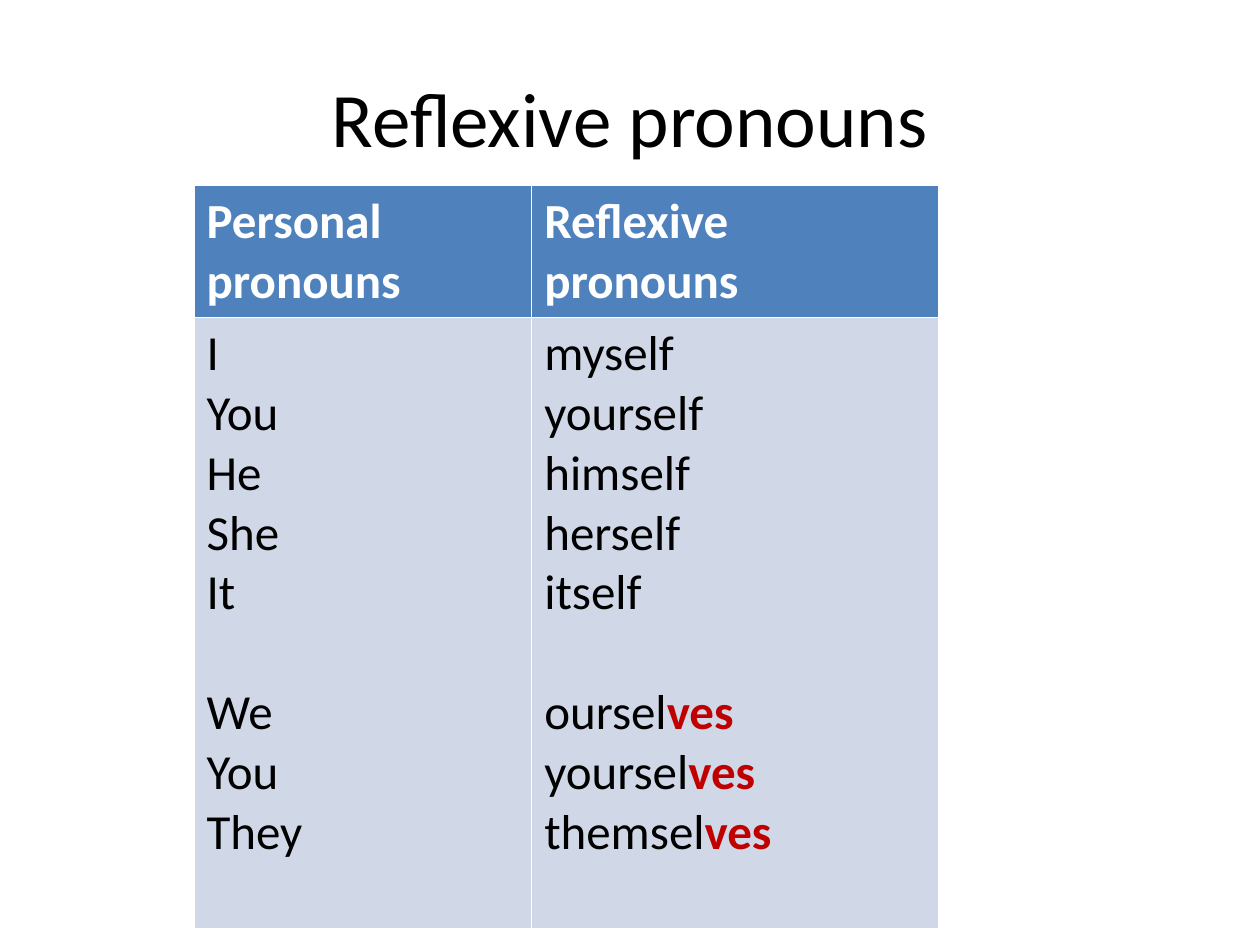
from pptx import Presentation
from pptx.dml.color import RGBColor
from pptx.enum.text import MSO_ANCHOR, PP_ALIGN
from pptx.util import Inches, Pt

MIDDLE = MSO_ANCHOR.MIDDLE
LEFT, CENTER = PP_ALIGN.LEFT, PP_ALIGN.CENTER
FONT = "Calibri"
COLORS = {"ink": "000000", "white": "FFFFFF", "head": "4F81BD",
          "body": "D0D8E8", "mark": "C00000"}
HEADS = ["Personal pronouns", "Reflexive pronouns"]
SINGLE = [("I", "myself"), ("You", "yourself"), ("He", "himself"),
          ("She", "herself"), ("It", "itself")]
PLURAL = [("We", "ourselves"), ("You", "yourselves"), ("They", "themselves")]
ENDING = "ves"


def color(name):
    """Return the named colour."""
    return RGBColor.from_string(COLORS[name])


def write(para, text, size=28, ink="ink", bold=False, align=LEFT, before=0):
    """Add a formatted run to a paragraph."""
    para.alignment = align
    para.space_before = Pt(before)
    run = para.add_run()
    run.text = text
    font = run.font
    font.name, font.size, font.bold = FONT, Pt(size), bold
    font.color.rgb = color(ink)


def paint(cell, fill):
    """Fill a cell with a named colour."""
    cell.fill.solid()
    cell.fill.fore_color.rgb = color(fill)


def add_title(slide, left, top, width, height):
    """Place the centred title in its box."""
    box = slide.shapes.add_textbox(
        Inches(left), Inches(top), Inches(width), Inches(height))
    frame = box.text_frame
    frame.word_wrap = True
    frame.vertical_anchor = MIDDLE
    write(frame.paragraphs[0], "Reflexive pronouns", size=44, align=CENTER)


def fill_list(cell, words):
    """List the words in a cell, with a gap before the plurals."""
    frame = cell.text_frame
    for i, word in enumerate(words):
        para = frame.paragraphs[0] if i == 0 else frame.add_paragraph()
        gap = 34.2 if i == len(SINGLE) else 0
        stem = word.removesuffix(ENDING)
        write(para, stem, before=gap)
        if stem != word:
            write(para, ENDING, ink="mark", bold=True, before=gap)


def add_grid(slide, left, top, width, height):
    """Place the pronoun table in its box."""
    table = slide.shapes.add_table(
        2, 2, Inches(left), Inches(top), Inches(width), Inches(height)).table
    first, head = 2.68, 1.05
    for col, size in zip(table.columns, (first, width - first)):
        col.width = Inches(size)
    for row, size in zip(table.rows, (head, height - head)):
        row.height = Inches(size)
    for i, words in enumerate(zip(*SINGLE, *PLURAL)):
        top_cell, low_cell = table.cell(0, i), table.cell(1, i)
        paint(top_cell, "head")
        paint(low_cell, "body")
        write(top_cell.text_frame.paragraphs[0], HEADS[i],
              ink="white", bold=True)
        fill_list(low_cell, words)


def main():
    """Build and save the slide."""
    deck = Presentation()
    deck.slide_width, deck.slide_height = Inches(10), Inches(7.5)
    slide = deck.slides.add_slide(deck.slide_layouts[6])
    add_title(slide, 0.5, 0.3, 9, 1.25)
    add_grid(slide, 1.54, 1.47, 5.91, 5.9)
    deck.save("out.pptx")


if __name__ == "__main__":
    main()
